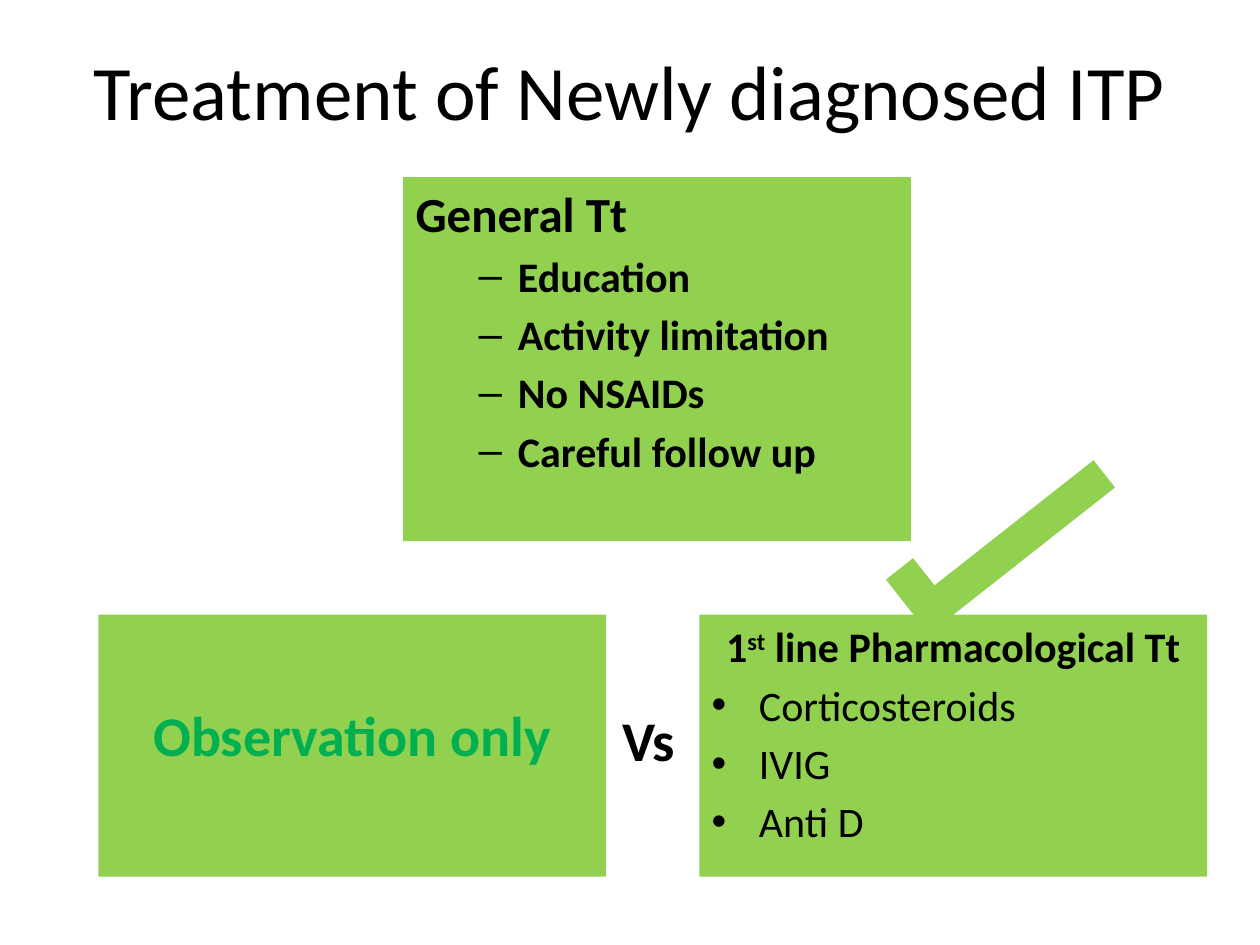
from lxml import etree
from pptx import Presentation
from pptx.dml.color import RGBColor
from pptx.enum import shapes, text
from pptx.oxml.ns import qn
from pptx.util import Pt

LIME = RGBColor(0x92, 0xD0, 0x50)
GREEN = RGBColor(0x00, 0xB0, 0x50)
BLACK = RGBColor(0, 0, 0)
FONT = "Calibri"
MID = text.PP_ALIGN.CENTER
LEFT = text.PP_ALIGN.LEFT


def style(para, size, bold=False, color=BLACK, align=LEFT):
    para.alignment = align
    for run in para.runs:
        font = run.font
        font.name, font.size, font.bold = FONT, Pt(size), bold
        font.color.rgb = color


def bullet(para, mark, left, hang):
    props = para._p.get_or_add_pPr()
    props.set("marL", str(Pt(left)))
    props.set("indent", str(Pt(-hang)))
    etree.SubElement(props, qn("a:buFont")).set("typeface", "Arial")
    etree.SubElement(props, qn("a:buChar")).set("char", mark)


def block(slide, kind, box):
    shape = slide.shapes.add_shape(kind, *map(Pt, box))
    shape.shadow.inherit = False
    shape.fill.solid()
    shape.fill.fore_color.rgb = LIME
    shape.line.fill.background()
    return shape


def panel(slide, box):
    frame = block(slide, shapes.MSO_SHAPE.RECTANGLE, box).text_frame
    frame.word_wrap = True
    frame.vertical_anchor = text.MSO_ANCHOR.TOP
    return frame


def add_list(frame, items, mark, left, hang, bold):
    for item in items:
        para = frame.add_paragraph()
        para.text = item
        para.space_before = Pt(4.5)
        style(para, 24, bold)
        bullet(para, mark, left, hang)


def add_title(slide, box):
    title = slide.shapes.title
    title.left, title.top, title.width, title.height = map(Pt, box)
    frame = title.text_frame
    frame.text = "Treatment of Newly diagnosed ITP"
    frame.vertical_anchor = text.MSO_ANCHOR.MIDDLE
    style(frame.paragraphs[0], 44, align=MID)


def add_care(slide, box):
    frame = panel(slide, box)
    frame.text = "General Tt"
    style(frame.paragraphs[0], 28, True)
    items = ["Education", "Activity limitation", "No NSAIDs", "Careful follow up"]
    add_list(frame, items, "–", 58.5, 22.5, True)


def add_watch(slide, box):
    frame = panel(slide, box)
    frame.margin_top = Pt(49)
    frame.text = "Observation only"
    style(frame.paragraphs[0], 32, True, GREEN, MID)


def add_drugs(slide, box):
    frame = panel(slide, box)
    head = frame.paragraphs[0]
    for part in ("1", "st", " line Pharmacological Tt"):
        head.add_run().text = part
    style(head, 24, True, align=MID)
    head.runs[1]._r.get_or_add_rPr().set("baseline", "30000")
    add_list(frame, ["Corticosteroids", "IVIG", "Anti D"], "•", 27, 27, False)


def add_versus(slide, box):
    frame = slide.shapes.add_textbox(*map(Pt, box)).text_frame
    frame.word_wrap = False
    frame.auto_size = text.MSO_AUTO_SIZE.SHAPE_TO_FIT_TEXT
    frame.text = "Vs"
    style(frame.paragraphs[0], 32, True)


def add_tick(slide, box):
    block(slide, shapes.MSO_SHAPE.CORNER, box).rotation = 321.8


def main():
    deck = Presentation()
    deck.slide_width, deck.slide_height = Pt(720), Pt(540)
    slide = deck.slides.add_slide(deck.slide_layouts[5])
    wide, top, high = 290.2, 351.2, 149.8
    add_title(slide, (36, 6, 648, 90))
    add_care(slide, (230.4, 101.3, wide, 208))
    add_watch(slide, (56.2, top, wide, high))
    add_drugs(slide, (399.6, top, wide, high))
    add_versus(slide, (348.5, 399.6, 45.4, 46))
    add_tick(slide, (504, 285.1, 135.4, 39.6))
    deck.save("out.pptx")


if __name__ == "__main__":
    main()
